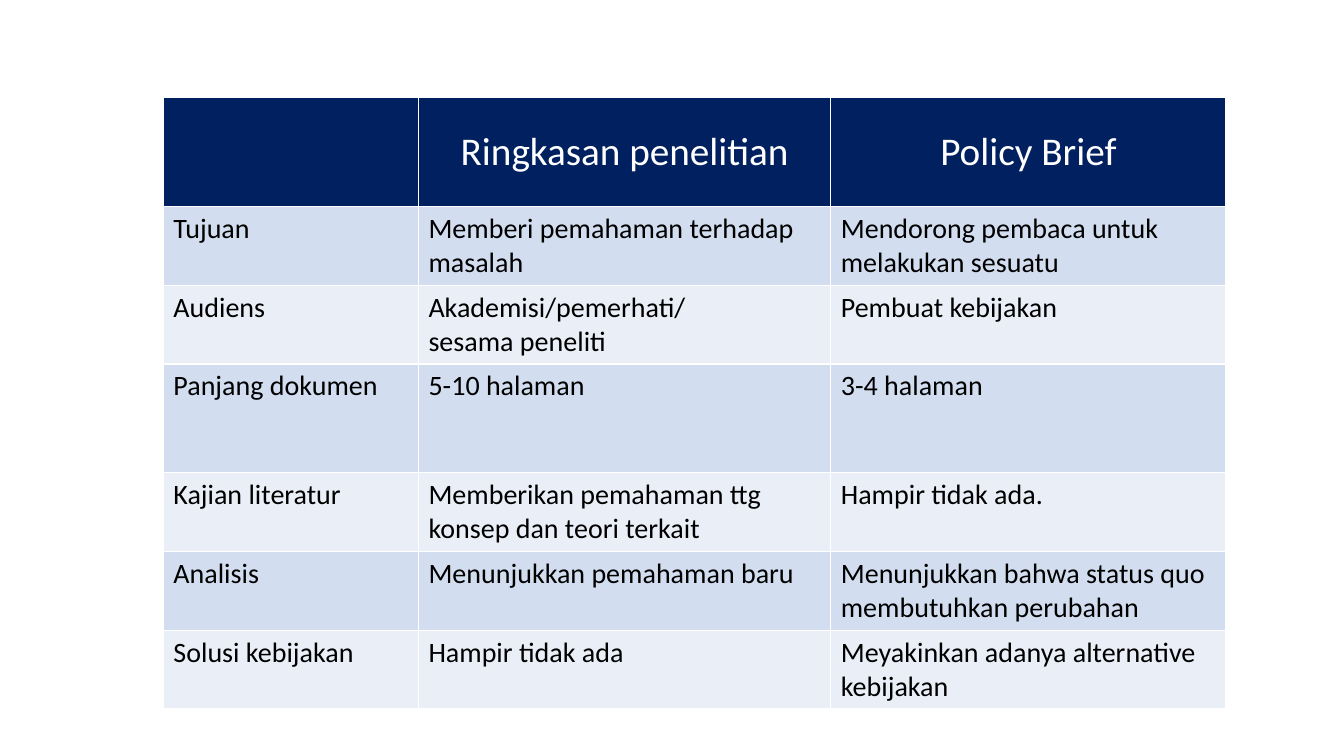
import pptx
import pptx.util
import pptx.dml.color
import pptx.enum.text

RGBColor = pptx.dml.color.RGBColor
NAVY = RGBColor(0x00, 0x20, 0x60)
BLUE = RGBColor(0xD2, 0xDE, 0xEF)
PALE = RGBColor(0xEA, 0xEF, 0xF7)
WHITE = RGBColor(0xFF, 0xFF, 0xFF)
BLACK = RGBColor(0x00, 0x00, 0x00)

FONT = "Calibri"
SCALE = 9144
WIDTHS = [253, 409, 392]
TALL, LOW = 108, 63
ROWS = [
    (TALL, ["", "Ringkasan penelitian", "Policy Brief"]),
    (LOW, ["Tujuan", "Memberi pemahaman terhadap masalah",
           "Mendorong pembaca untuk melakukan sesuatu"]),
    (LOW, ["Audiens", "Akademisi/pemerhati/\nsesama peneliti", "Pembuat kebijakan"]),
    (TALL, ["Panjang dokumen", "5-10 halaman", "3-4 halaman"]),
    (LOW, ["Kajian literatur", "Memberikan pemahaman ttg konsep dan teori terkait",
           "Hampir tidak ada."]),
    (LOW, ["Analisis", "Menunjukkan pemahaman baru",
           "Menunjukkan bahwa status quo membutuhkan perubahan"]),
    (LOW, ["Solusi kebijakan", "Hampir tidak ada",
           "Meyakinkan adanya alternative kebijakan"]),
]


def px(size):
    return pptx.util.Emu(size * SCALE)


def fill_cell(cell, text, shade, size, color, head):
    cell.fill.solid()
    cell.fill.fore_color.rgb = shade
    cell.text = text
    if head:
        cell.vertical_anchor = pptx.enum.text.MSO_ANCHOR.MIDDLE
    for para in cell.text_frame.paragraphs:
        if head:
            para.alignment = pptx.enum.text.PP_ALIGN.CENTER
        para.font.name = FONT
        para.font.size = pptx.util.Pt(size)
        para.font.bold = False
        para.font.color.rgb = color


def add_grid(slide, left, top, widths, rows):
    high = sum(height for height, texts in rows)
    frame = slide.shapes.add_table(len(rows), len(widths), px(left), px(top),
                                   px(sum(widths)), px(high))
    table = frame.table
    for column, width in zip(table.columns, widths):
        column.width = px(width)
    for index, (height, texts) in enumerate(rows):
        table.rows[index].height = px(height)
        head = index == 0
        if head:
            style = NAVY, 28, WHITE
        else:
            style = (BLUE if index % 2 else PALE), 20, BLACK
        for cell, text in zip(table.rows[index].cells, texts):
            fill_cell(cell, text, *style, head)


def main():
    deck = pptx.Presentation()
    deck.slide_width = px(1333)
    deck.slide_height = px(750)
    slide = deck.slides.add_slide(deck.slide_layouts[6])
    add_grid(slide, 162, 97, WIDTHS, ROWS)
    deck.save("out.pptx")


if __name__ == "__main__":
    main()
